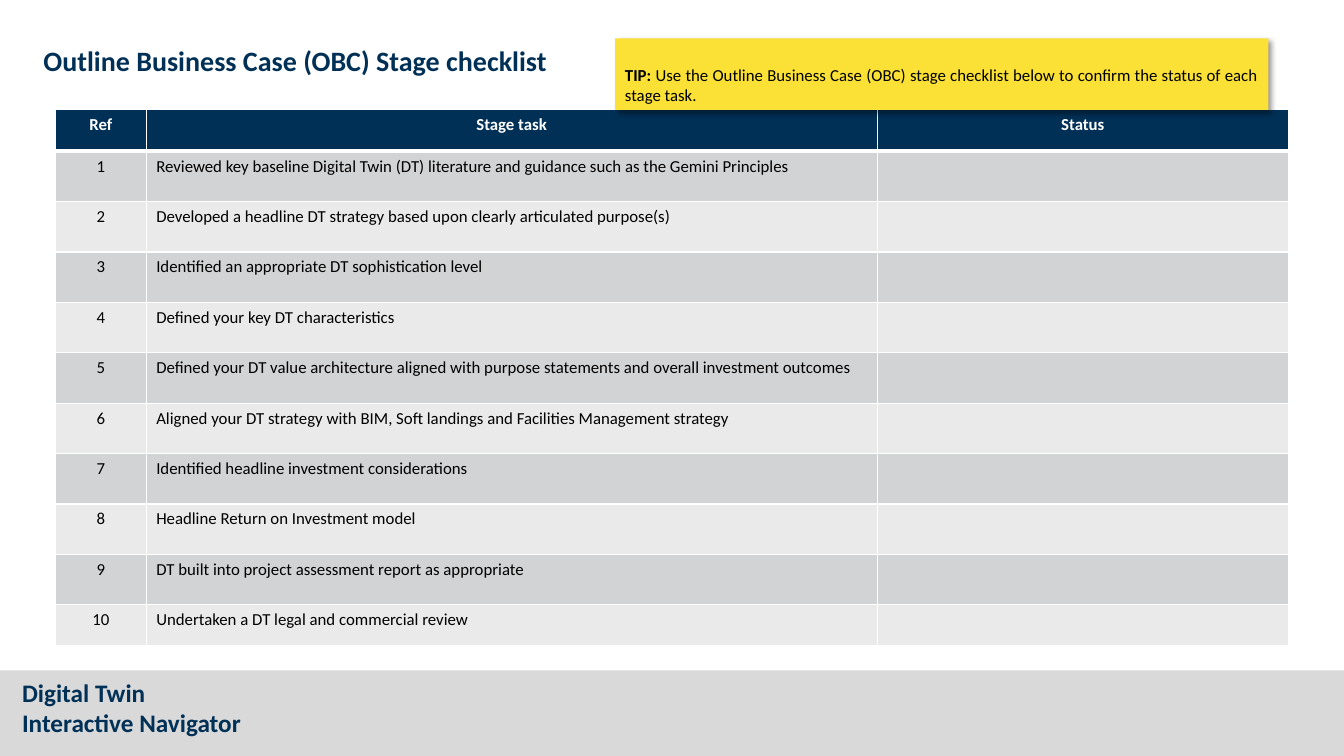
from lxml import etree
from pptx import Presentation
from pptx.dml.color import RGBColor
from pptx.enum.shapes import MSO_SHAPE as Shape
from pptx.enum.text import MSO_ANCHOR as Anchor, MSO_AUTO_SIZE as Fit, PP_ALIGN as Align
from pptx.oxml import parse_xml
from pptx.oxml.ns import nsdecls, qn
from pptx.util import Inches, Pt

WIDE, HIGH = 13.33, 7.5
NAVY, WHITE, BLACK = "003056", "FFFFFF", "000000"
BANDS = ["D2D3D5", "EAEAEB"]
HEADS = ["Ref", "Stage task", "Status"]
TASKS = [
    "Reviewed key baseline Digital Twin (DT) literature and guidance such as the Gemini Principles",
    "Developed a headline DT strategy based upon clearly articulated purpose(s)",
    "Identified an appropriate DT sophistication level",
    "Defined your key DT characteristics",
    "Defined your DT value architecture aligned with purpose statements and overall investment outcomes",
    "Aligned your DT strategy with BIM, Soft landings and Facilities Management strategy",
    "Identified headline investment considerations",
    "Headline Return on Investment model",
    "DT built into project assessment report as appropriate",
    "Undertaken a DT legal and commercial review",
]


def paint(target, color):
    """Give a solid colour to a fill."""
    target.fill.solid()
    target.fill.fore_color.rgb = RGBColor.from_string(color)


def style(para, size, color, bold=False, align=Align.LEFT):
    para.alignment = align
    font = para.font
    font.name, font.size, font.bold = "Calibri", Pt(size), bold
    font.color.rgb = RGBColor.from_string(color)


def inch(box):
    return [Inches(v) for v in box]


def block(slide, box, color):
    rect = slide.shapes.add_shape(Shape.RECTANGLE, *inch(box))
    rect.shadow.inherit = False
    paint(rect, color)
    rect.line.fill.background()
    return rect


def edge(cell, base):
    """Draw white borders, with the bottom one of the given width."""
    props = cell._tc.get_or_add_tcPr()
    for spot, (side, width) in enumerate(zip("LRTB", [1, 1, 1, base])):
        props.insert(spot, parse_xml(
            f'<a:ln{side} {nsdecls("a")} w="{Pt(width)}"><a:solidFill>'
            f'<a:srgbClr val="{WHITE}"/></a:solidFill></a:ln{side}>'))


def add_title(slide, box):
    title = slide.shapes.title
    title.left, title.top, title.width, title.height = inch(box)
    frame = title.text_frame
    frame.text = "Outline Business Case (OBC) Stage checklist"
    frame.auto_size, frame.vertical_anchor = Fit.NONE, Anchor.MIDDLE
    style(frame.paragraphs[0], 20, NAVY, True)


def add_list(slide, box):
    rows = [HEADS] + [[str(n), task, ""] for n, task in enumerate(TASKS, 1)]
    grid = slide.shapes.add_table(len(rows), len(HEADS), *inch(box)).table
    for col, width in zip(grid.columns, [0.9, 7.25, 4.08]):
        col.width = Inches(width)
    for row, height in zip(grid.rows, [0.41] + [0.5] * 9 + [0.4]):
        row.height = Inches(height)
    for r, texts in enumerate(rows):
        head = r == 0
        for c, text in enumerate(texts):
            cell = grid.cell(r, c)
            cell.margin_bottom = Inches(0.02)
            cell.text = text
            paint(cell, NAVY if head else BANDS[(r - 1) % 2])
            edge(cell, 3 if head else 1)
            style(cell.text_frame.paragraphs[0], 12, WHITE if head else BLACK, head,
                  Align.CENTER if head or c == 0 else Align.LEFT)


def add_tip(slide, box):
    note = block(slide, box, "FBE136")
    glow = note._element.spPr.find(qn("a:effectLst"))
    drop = etree.SubElement(glow, qn("a:outerShdw"), blurRad=str(Pt(4)), dist=str(Pt(3)),
                            dir="2700000", algn="tl", rotWithShape="0")
    tint = etree.SubElement(drop, qn("a:srgbClr"), val=BLACK)
    etree.SubElement(tint, qn("a:alpha"), val="40000")
    frame = note.text_frame
    frame.word_wrap, frame.vertical_anchor = True, Anchor.BOTTOM
    para = frame.paragraphs[0]
    style(para, 12, BLACK, align=Align.JUSTIFY)
    lead = para.add_run()
    lead.text, lead.font.bold = "TIP: ", True
    para.add_run().text = ("Use the Outline Business Case (OBC) stage checklist below "
                           "to confirm the status of each stage task.")


def add_foot(slide, box):
    left, top, _, high = box
    block(slide, box, "D9D9D9")
    name = slide.shapes.add_textbox(*inch((left + 0.12, top + 0.02, 4.05, high - 0.14)))
    frame = name.text_frame
    frame.word_wrap = True
    frame.text = "Digital Twin\nInteractive Navigator"
    for para in frame.paragraphs:
        style(para, 18, NAVY, True)


def main():
    deck = Presentation()
    deck.slide_width, deck.slide_height = Inches(WIDE), Inches(HIGH)
    slide = deck.slides.add_slide(deck.slide_layouts[5])
    add_foot(slide, (0, HIGH - 0.85, WIDE, 0.85))
    add_list(slide, (0.55, 1.09, 12.23, 5.31))
    add_title(slide, (0.33, 0.38, 5.66, 0.44))
    add_tip(slide, (6.1, 0.38, 6.48, 0.71))
    deck.save("out.pptx")


if __name__ == "__main__":
    main()
